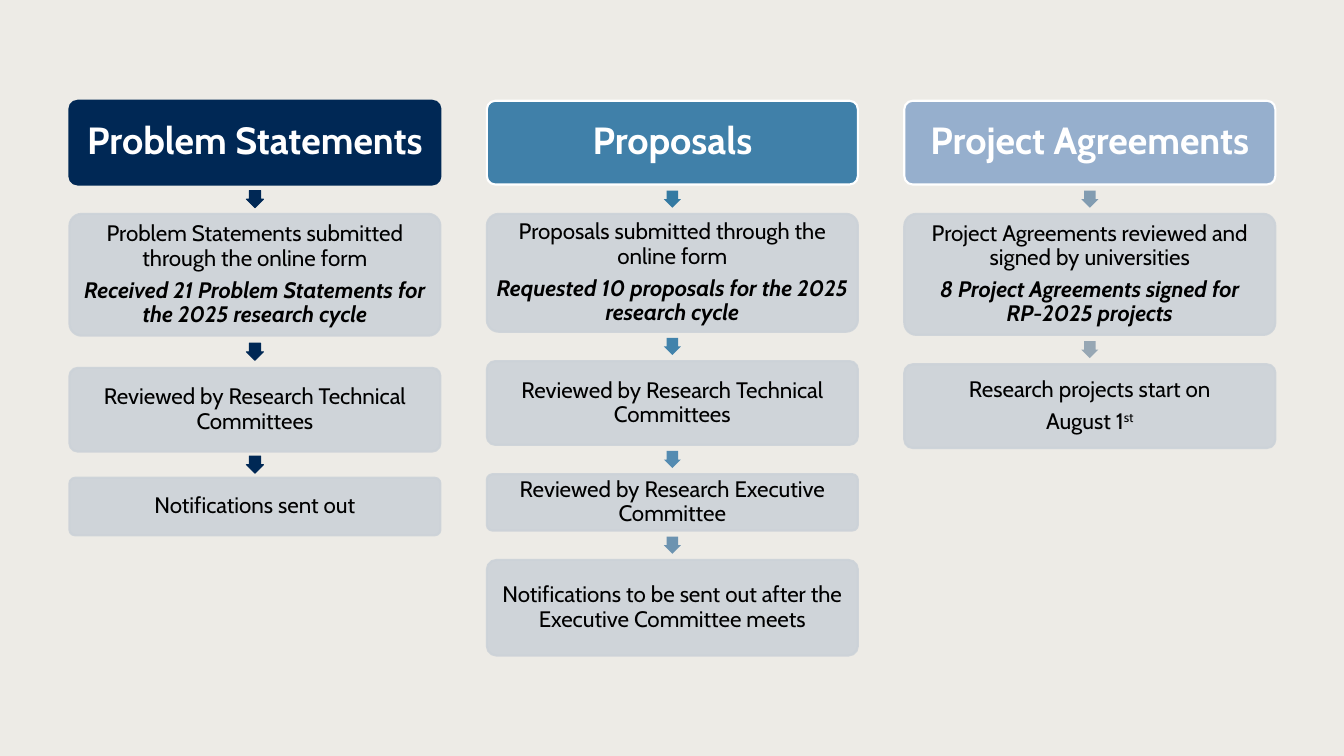
from dataclasses import dataclass

from pptx import Presentation
from pptx.dml.color import RGBColor
from pptx.enum.shapes import MSO_SHAPE
from pptx.enum.text import MSO_ANCHOR, PP_ALIGN
from pptx.oxml import parse_xml
from pptx.oxml.ns import nsdecls, qn
from pptx.shapes.autoshape import Shape
from pptx.slide import Slide
from pptx.util import Cm, Pt

ROUND = MSO_SHAPE.ROUNDED_RECTANGLE
ARROW = MSO_SHAPE.RIGHT_ARROW
CENTER = PP_ALIGN.CENTER
MIDDLE = MSO_ANCHOR.MIDDLE

FONT = "Cabin"
PAPER, NAVY, WHITE, BLACK, GREY = "EDEBE6", "002855", "FFFFFF", "000000", "CCD2D8"

# Grid in centimetres
LEFT, TOP, PITCH, WIDTH = 1.75, 2.54, 10.52, 9.35
HIGH, GAP, TIP = 2.11, 0.74, 0.43


@dataclass
class Part:
    text: str
    strong: bool = False
    raised: bool = False


@dataclass
class Step:
    paras: list[list[Part]]
    arrow: str
    height: float = HIGH
    gap: float = GAP


@dataclass
class Stage:
    title: str
    fill: str
    edge: str
    rim: str | None
    steps: list[Step]


STAGES = [
    Stage("Problem Statements", NAVY, NAVY, NAVY, [
        Step([[Part("Problem Statements submitted through the online form")],
              [Part("Received 21 Problem Statements for the 2025 research cycle", True)]],
             NAVY, 3.07),
        Step([[Part("Reviewed by Research Technical Committees")]], NAVY, gap=0.81),
        Step([[Part("Notifications sent out")]], NAVY, 1.45, 0.66),
    ]),
    Stage("Proposals", "4080A9", WHITE, None, [
        Step([[Part("Proposals submitted through the online form")],
              [Part("Requested 10 proposals for the 2025 research cycle", True)]],
             "347AA2", 2.97),
        Step([[Part("Reviewed by Research Technical Committees")]], "4283AB"),
        Step([[Part("Reviewed by Research Executive Committee")]], "548BB1", 1.42),
        Step([[Part("Notifications to be sent out after the Executive Committee meets")]],
             "6C93B0", 2.41),
    ]),
    Stage("Project Agreements", "96AFCD", WHITE, None, [
        Step([[Part("Project Agreements reviewed and signed by universities")],
              [Part("8 Project Agreements signed for RP-2025 projects", True)]],
             "829CB1", 3.05),
        Step([[Part("Research projects start on")],
              [Part("August 1"), Part("st", raised=True)]], "97A7B4"),
    ]),
]


def paint(target, color: str) -> None:
    """Give a fill or a font a solid colour."""
    if hasattr(target, "solid"):
        target.solid()
        target.fore_color.rgb = RGBColor.from_string(color)
    else:
        target.color.rgb = RGBColor.from_string(color)


def add_box(slide: Slide, x: float, y: float, height: float,
            fill: str, edge: str) -> Shape:
    box = slide.shapes.add_shape(ROUND, Cm(x), Cm(y), Cm(WIDTH), Cm(height))
    box.adjustments[0] = 0.1
    box.shadow.inherit = False
    paint(box.fill, fill)
    paint(box.line.fill, edge)
    box.line.width = Pt(1.5)
    return box


def write(box: Shape, paras: list[list[Part]], size: float,
          color: str, inset: float, bold: bool = False) -> None:
    frame = box.text_frame
    frame.word_wrap = True
    frame.vertical_anchor = MIDDLE
    frame.margin_left = frame.margin_right = Cm(inset)
    frame.margin_top = frame.margin_bottom = Cm(inset)
    for i, parts in enumerate(paras):
        para = frame.add_paragraph() if i else frame.paragraphs[0]
        para.alignment = CENTER
        para.line_spacing = 0.9
        para.space_after = Pt(size * 0.35)
        for part in parts:
            run = para.add_run()
            run.text = part.text
            run.font.name = FONT
            run.font.size = Pt(size)
            run.font.bold = bold or part.strong
            run.font.italic = part.strong
            paint(run.font, color)
            if part.raised:
                run._r.get_or_add_rPr().set("baseline", "30000")


def soften(box: Shape) -> None:
    """Make fill and outline ten percent see-through."""
    for color in box._element.spPr.iter(qn("a:srgbClr")):
        color.append(parse_xml(f'<a:alpha {nsdecls("a")} val="90000"/>'))


def add_arrow(slide: Slide, x: float, y: float, fill: str, rim: str | None) -> None:
    arrow = slide.shapes.add_shape(ARROW, Cm(x), Cm(y), Cm(TIP), Cm(TIP))
    arrow.adjustments[0] = 0.667
    arrow.rotation = 90
    arrow.shadow.inherit = False
    paint(arrow.fill, fill)
    if rim:
        paint(arrow.line.fill, rim)
        arrow.line.width = Pt(0.75)
    else:
        arrow.line.fill.background()


def add_stage(slide: Slide, stage: Stage, x: float) -> None:
    # Header
    head = add_box(slide, x, TOP, HIGH, stage.fill, stage.edge)
    write(head, [[Part(stage.title)]], 27, WHITE, 0.1, bold=True)
    # Steps, each below an arrow centred in the gap
    y = TOP + HIGH
    for step in stage.steps:
        add_arrow(slide, x + (WIDTH - TIP) / 2, y + (step.gap - TIP) / 2,
                  step.arrow, stage.rim)
        y += step.gap
        box = add_box(slide, x, y, step.height, GREY, GREY)
        soften(box)
        write(box, step.paras, 16, BLACK, 0.05)
        y += step.height


def main() -> None:
    deck = Presentation()
    deck.slide_width, deck.slide_height = Cm(33.87), Cm(19.05)
    slide = deck.slides.add_slide(deck.slide_layouts[6])
    paint(slide.background.fill, PAPER)
    for i, stage in enumerate(STAGES):
        add_stage(slide, stage, LEFT + i * PITCH)
    deck.save("out.pptx")


if __name__ == "__main__":
    main()
